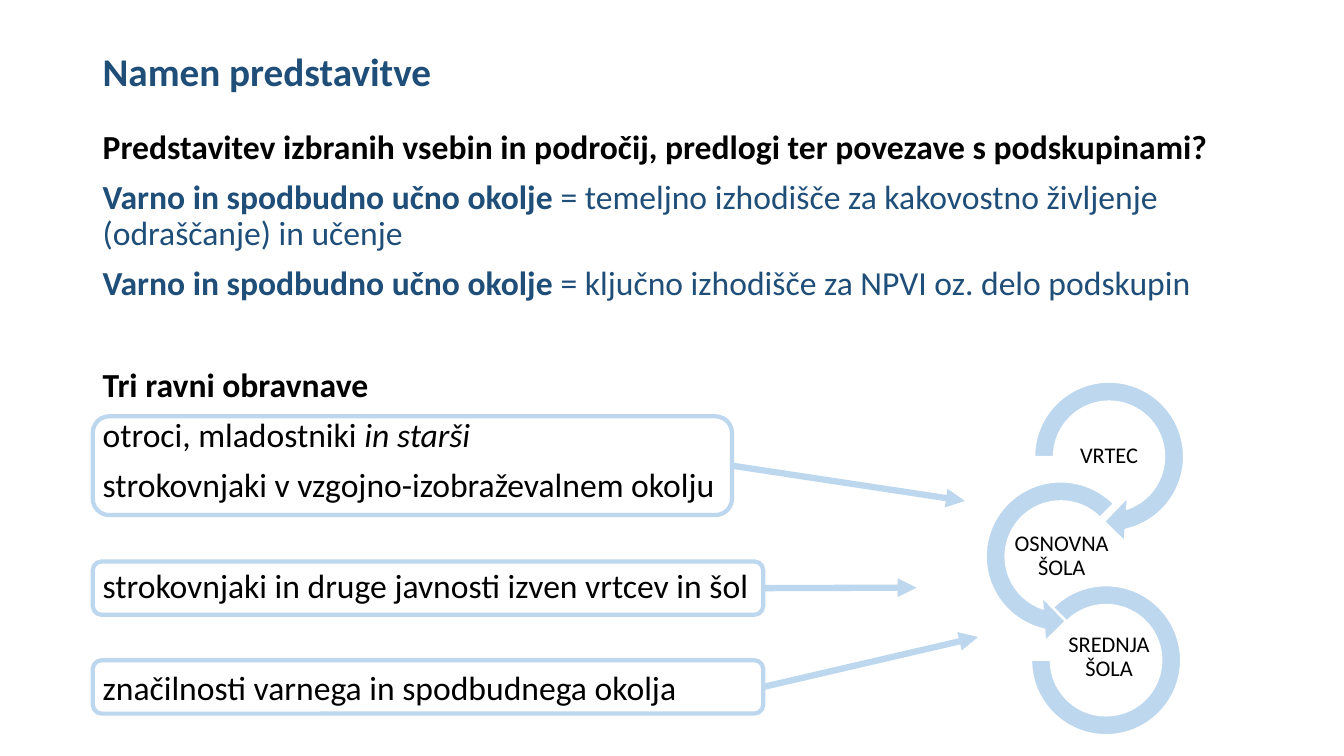
from lxml import etree
from pptx import Presentation
from pptx.dml.color import RGBColor
from pptx.enum.shapes import MSO_CONNECTOR, MSO_SHAPE as Geo
from pptx.enum.text import MSO_ANCHOR as Anchor, PP_ALIGN as Align
from pptx.oxml.ns import qn
from pptx.util import Inches, Pt

COLORS = {"navy": "1F4E79", "black": "000000", "sky": "BDD7EE", "white": "FFFFFF"}
BOLD, PLAIN, ITALIC = {"bold": True}, {"bold": False}, {"italic": True}

# Content: each body line is (space before, colour, [(words, format), ...])
TITLE = "Namen predstavitve"
GAP, WIDE_GAP = 10, 46.4
ENVIRONMENT = ("Varno in spodbudno učno okolje ", BOLD)
BODY = [
    (GAP, "black", [("Predstavitev izbranih vsebin in področij, predlogi ter povezave "
                     "s podskupinami?", BOLD)]),
    (GAP, "navy", [ENVIRONMENT, ("= temeljno izhodišče za kakovostno življenje "
                                 "(odraščanje) in učenje", PLAIN)]),
    (GAP, "navy", [ENVIRONMENT, ("= ključno izhodišče za NPVI oz. delo podskupin", PLAIN)]),
    (WIDE_GAP, "black", [("Tri ravni obravnave", BOLD)]),
    (GAP, "black", [("otroci, mladostniki ", PLAIN), ("in starši", ITALIC)]),
    (GAP, "black", [("strokovnjaki v vzgojno-izobraževalnem okolju", PLAIN)]),
    (WIDE_GAP, "black", [("strokovnjaki in druge javnosti izven vrtcev in šol", PLAIN)]),
    (WIDE_GAP, "black", [("značilnosti varnega in spodbudnega okolja", PLAIN)]),
]

# Frames around the levels: top, width, height, arrow tip
LEFT = 0.92
LEVELS = [
    (4.13, 6.34, 0.98, (9.57, 4.97)),
    (5.57, 6.65, 0.53, (9.09, 5.83)),
    (6.55, 6.65, 0.53, (9.7, 6.32)),
]

# Rings: label, label box, geometry, left, top, size, adjustments
SCHOOLS = [
    ("VRTEC", (10.52, 4.29, 0.96, 0.48),
     Geo.CIRCULAR_ARROW, 10.14, 3.67, 1.72, (0.11, 11.423, 45, 108, 0.125)),
    ("OSNOVNA ŠOLA", (9.94, 5.28, 1.18, 0.48),
     Geo.LEFT_CIRCULAR_ARROW, 9.66, 4.66, 1.72, (0.11, 11.423, 63, 189, 0.125)),
    ("SREDNJA ŠOLA", (10.52, 6.28, 0.96, 0.48),
     Geo.BLOCK_ARC, 10.23, 5.81, 1.48, (135, 108, 0.127)),
]

prs = Presentation()
prs.slide_width, prs.slide_height = Inches(13.33), Inches(7.5)
shapes = prs.slides.add_slide(prs.slide_layouts[6]).shapes


def rgb(name):
    return RGBColor.from_string(COLORS[name])


def add_frame(box, **settings):
    frame = shapes.add_textbox(*map(Inches, box)).text_frame
    for name, value in {"word_wrap": True, **settings}.items():
        setattr(frame, name, value)
    return frame


def write(paragraph, runs, size, color, **layout):
    for name, value in {"line_spacing": 0.9, **layout}.items():
        setattr(paragraph, name, value)
    for words, style in runs:
        run = paragraph.add_run()
        run.text = words
        run.font.color.rgb = rgb(color)
        for name, value in {"name": "Calibri", "size": Pt(size), **style}.items():
            setattr(run.font, name, value)


def add_outlined(geometry, box, line_color, line_width):
    shape = shapes.add_shape(geometry, *map(Inches, box))
    shape.shadow.inherit = False
    shape.line.color.rgb = rgb(line_color)
    shape.line.width = Pt(line_width)
    return shape


# Title and body
title = add_frame((LEFT, 0.4, 11.5, 0.67), vertical_anchor=Anchor.MIDDLE)
write(title.paragraphs[0], [(TITLE, BOLD)], 28, "navy")

body = add_frame((LEFT, 1.24, 11.5, 6.09))
for i, (space, color, runs) in enumerate(BODY):
    paragraph = body.add_paragraph() if i else body.paragraphs[0]
    write(paragraph, runs, 24, color, space_before=Pt(space))

# Level frames, each with an arrow to the rings
for top, width, height, tip in LEVELS:
    level = add_outlined(Geo.ROUNDED_RECTANGLE, (LEFT, top, width, height), "sky", 3)
    level.fill.background()
    start = (LEFT + width, top + height / 2)
    arrow = shapes.add_connector(MSO_CONNECTOR.STRAIGHT, *map(Inches, start + tip))
    arrow.begin_connect(level, 3)
    arrow.line.color.rgb = rgb("sky")
    arrow.line.width = Pt(4.5)
    etree.SubElement(arrow.line._get_or_add_ln(), qn("a:tailEnd"), type="triangle")
    etree.SubElement(arrow._element.spPr, qn("a:effectLst"))

# School rings with labels
for label, label_box, geometry, left, top, size, adjustments in SCHOOLS:
    ring = add_outlined(geometry, (left, top, size, size), "white", 1)
    ring.fill.solid()
    ring.fill.fore_color.rgb = rgb("sky")
    for i, value in enumerate(adjustments):
        ring.adjustments[i] = value
    margins = {f"margin_{side}": Inches(0.01) for side in ("left", "top", "right", "bottom")}
    caption = add_frame(label_box, vertical_anchor=Anchor.MIDDLE, **margins)
    write(caption.paragraphs[0], [(label, PLAIN)], 16, "black", alignment=Align.CENTER)

prs.save("out.pptx")
